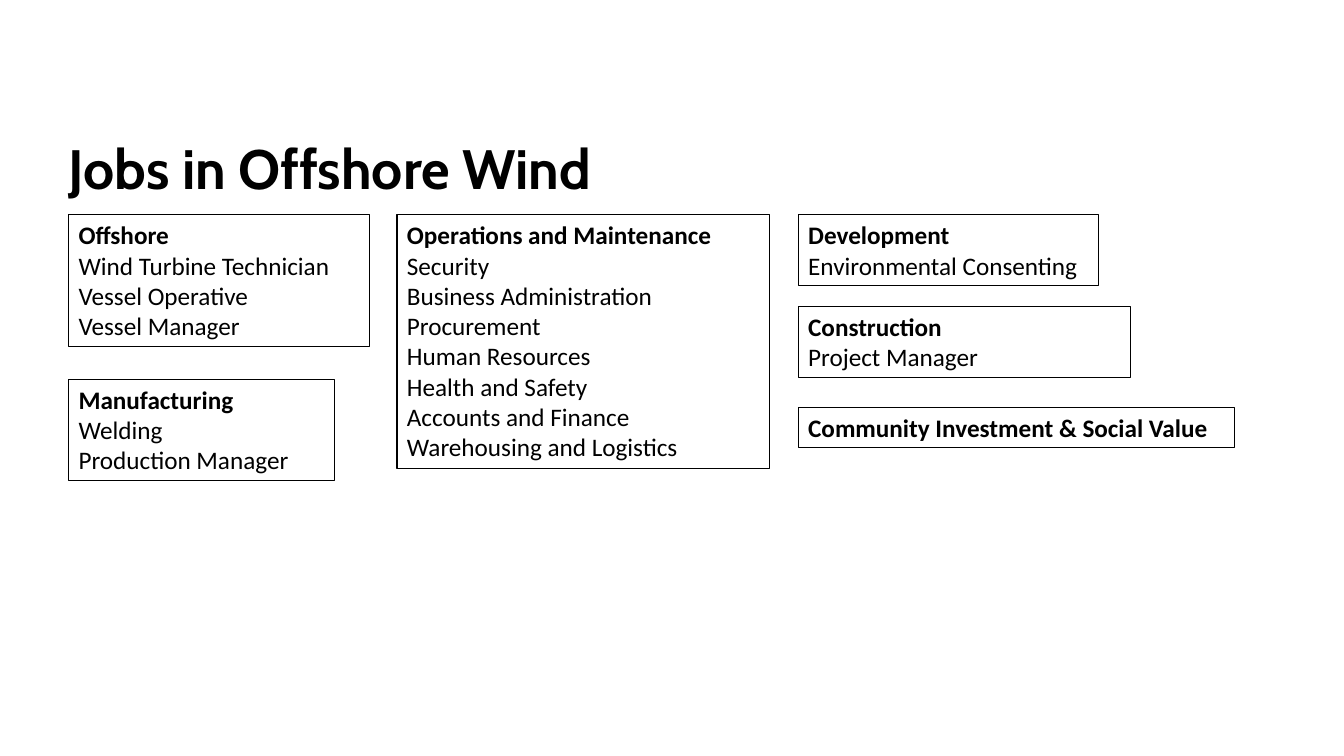
from pptx import Presentation
from pptx.dml.color import RGBColor
from pptx.enum import shapes as sh, text as tx
from pptx.util import Pt

COLORS = {"ink": "000000", "page": "FFFFFF"}
LEFT, MID, RIGHT = 49, 283.6, 570.2
TOP = 153.4
LINE, PAD = 21.75, 7.2

# left, top, width, heading, jobs
GROUPS = [
    (LEFT, TOP, 214.6, "Offshore",
     ["Wind Turbine Technician", "Vessel Operative", "Vessel Manager"]),
    (LEFT, 270.8, 190, "Manufacturing", ["Welding", "Production Manager"]),
    (MID, TOP, 266.4, "Operations and Maintenance",
     ["Security", "Business Administration", "Procurement",
      "Human Resources", "Health and Safety", "Accounts and Finance",
      "Warehousing and Logistics"]),
    (RIGHT, TOP, 214.6, "Development", ["Environmental Consenting"]),
    (RIGHT, 218.9, 237.6, "Construction", ["Project Manager"]),
    (RIGHT, 290.9, 311.8, "Community Investment & Social Value", []),
]


def color(name):
    return RGBColor.from_string(COLORS[name])


def write(para, words, face, size, bold):
    para.text = words
    para.alignment = tx.PP_ALIGN.LEFT
    font = para.runs[0].font
    font.name, font.size, font.bold = face, Pt(size), bold
    font.color.rgb = color("ink")


def add_title(slide, words):
    box = slide.shapes.add_textbox(Pt(41.8), Pt(99.4), Pt(674.6), Pt(46))
    frame = box.text_frame
    frame.word_wrap = True
    frame.vertical_anchor = tx.MSO_ANCHOR.MIDDLE
    para = frame.paragraphs[0]
    write(para, words, "Cabin", 39.6, True)
    para.line_spacing = 0.9


def add_group(slide, left, top, width, head, jobs):
    """Draw an outlined box with a bold heading over its list of jobs."""
    lines = [head, *jobs]
    box = slide.shapes.add_shape(
        sh.MSO_SHAPE.RECTANGLE, Pt(left), Pt(top), Pt(width),
        Pt(LINE * len(lines) + PAD))
    box.shadow.inherit = False
    box.fill.background()
    box.line.color.rgb = color("ink")
    box.line.width = Pt(0.75)
    frame = box.text_frame
    frame.word_wrap = True
    frame.auto_size = tx.MSO_AUTO_SIZE.SHAPE_TO_FIT_TEXT
    frame.vertical_anchor = tx.MSO_ANCHOR.TOP
    frame.text = "\n".join(lines)
    for i, para in enumerate(frame.paragraphs):
        write(para, lines[i], "Calibri", 18, i == 0)


def main():
    deck = Presentation()
    deck.slide_width, deck.slide_height = Pt(960), Pt(540)
    slide = deck.slides.add_slide(deck.slide_layouts[6])
    slide.background.fill.solid()
    slide.background.fill.fore_color.rgb = color("page")
    add_title(slide, "Jobs in Offshore Wind")
    for group in GROUPS:
        add_group(slide, *group)
    deck.save("out.pptx")


if __name__ == "__main__":
    main()
